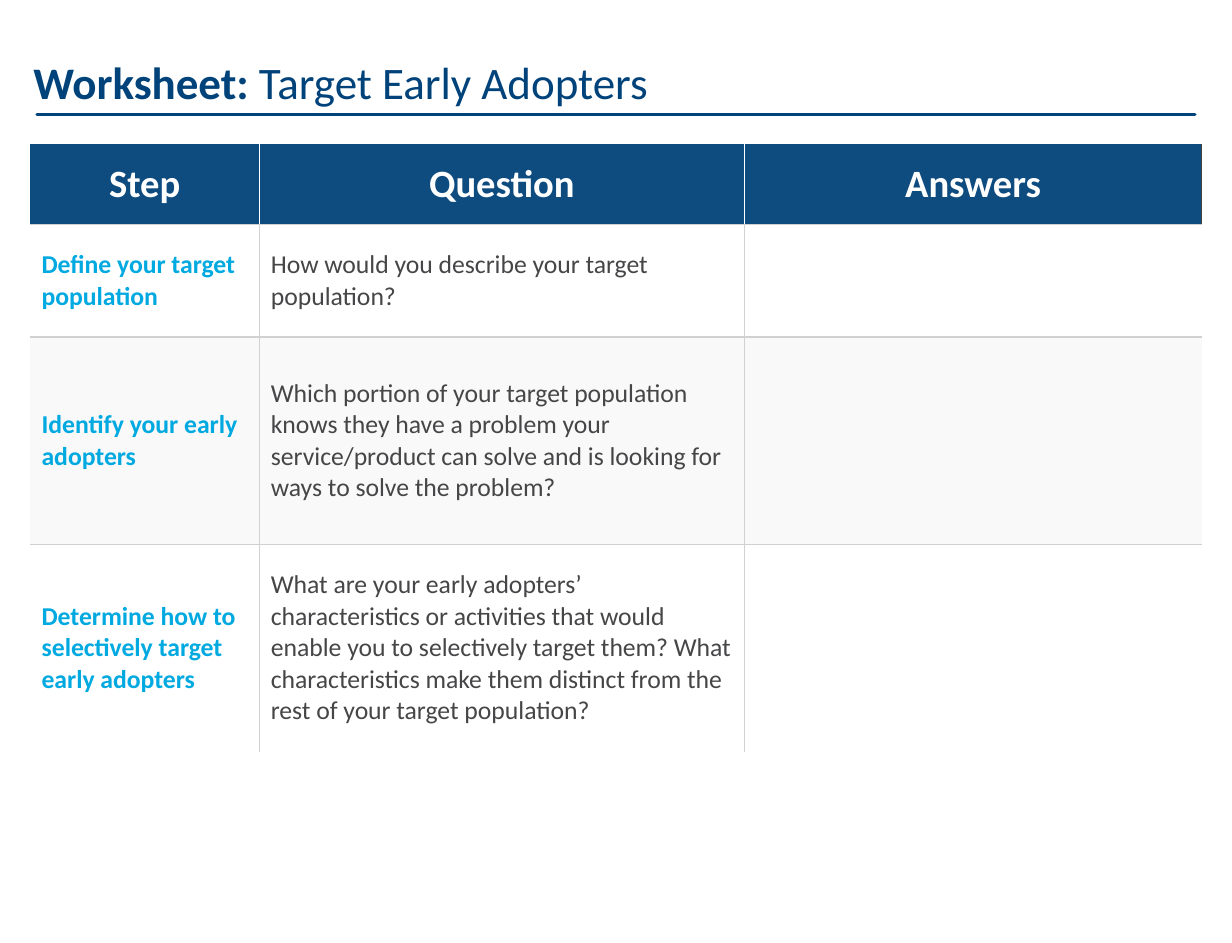
from dataclasses import dataclass

from lxml import etree
from pptx import Presentation
from pptx import util as u
from pptx.dml.color import RGBColor
from pptx.enum import shapes, text
from pptx.oxml import ns

NAVY = RGBColor(0x00, 0x43, 0x7A)
HEADER_BLUE = RGBColor(0x0E, 0x4B, 0x7F)
CYAN = RGBColor(0x00, 0xA9, 0xE0)
CHARCOAL = RGBColor(0x46, 0x45, 0x47)
EDGE_GRAY = RGBColor(0x42, 0x42, 0x43)
RULE_GRAY = RGBColor(0xD0, 0xD1, 0xD3)
BAND_GRAY = RGBColor(0xF9, 0xF9, 0xF9)
WHITE = RGBColor(0xFF, 0xFF, 0xFF)

SLIDE_WIDTH, SLIDE_HEIGHT = u.Inches(10.64), u.Inches(8.14)


@dataclass
class Column:
    heading: str
    width: float  # percent of slide width
    color: RGBColor
    bold: bool


@dataclass
class Step:
    texts: tuple[str, str, str]
    height: float  # percent of slide height


HEADER_HEIGHT = 8.6
COLUMNS = [
    Column("Step", 18.61, CYAN, True),
    Column("Question", 39.38, CHARCOAL, False),
    Column("Answers", 37.12, CHARCOAL, False),
]
STEPS = [
    Step(("Define your target population",
          "How would you describe your target population?", ""), 11.92),
    Step(("Identify your early adopters",
          "Which portion of your target population knows they have a problem your "
          "service/product can solve and is looking for ways to solve the problem?",
          ""), 21.99),
    Step(("Determine how to selectively target early adopters",
          "What are your early adopters’ characteristics or activities that would "
          "enable you to selectively target them? What characteristics make them "
          "distinct from the rest of your target population?", ""), 21.99),
]


def across(percent: float) -> int:
    return round(SLIDE_WIDTH * percent / 100)


def down(percent: float) -> int:
    return round(SLIDE_HEIGHT * percent / 100)


def write(paragraph, words: str, *, size: float, color: RGBColor, bold: bool = False,
          align=text.PP_ALIGN.LEFT) -> None:
    paragraph.alignment = align
    run = paragraph.add_run()
    run.text = words
    run.font.name = "Calibri"
    run.font.size = u.Pt(size)
    run.font.bold = bold
    run.font.color.rgb = color


def set_borders(cell, edges: dict[str, RGBColor | None]) -> None:
    """Give each edge a one-point line, or none; edges come in L, R, T, B order."""
    properties = cell._tc.get_or_add_tcPr()
    for place, (side, color) in enumerate(edges.items()):
        line = etree.Element(ns.qn(f"a:ln{side}"), w=str(u.Pt(1)))
        if color is None:
            etree.SubElement(line, ns.qn("a:noFill"))
        else:
            solid = etree.SubElement(line, ns.qn("a:solidFill"))
            etree.SubElement(solid, ns.qn("a:srgbClr"), val=str(color))
        properties.insert(place, line)


def add_title(slide) -> None:
    # Heading, resting on the rule
    title = slide.shapes.add_textbox(across(1.79), 0, across(95.39), down(12.16))
    frame = title.text_frame
    frame.word_wrap = True
    frame.vertical_anchor = text.MSO_ANCHOR.BOTTOM
    heading = frame.paragraphs[0]
    heading.line_spacing = 0.9
    write(heading, "Worksheet: ", size=28, color=NAVY, bold=True)
    write(heading, "Target Early Adopters", size=28, color=NAVY)

    # Rule
    rule = slide.shapes.add_connector(shapes.MSO_CONNECTOR.STRAIGHT, across(3.01),
                                      down(12.16), across(96.99), down(12.16))
    rule.line.color.rgb = NAVY
    rule.line.width = u.Pt(2.25)
    rule.line._get_or_add_ln().set("cap", "rnd")
    etree.SubElement(rule._element.spPr, ns.qn("a:effectLst"))


def add_worksheet(slide) -> None:
    heights = [HEADER_HEIGHT] + [step.height for step in STEPS]
    last_row, last_column = len(STEPS), len(COLUMNS) - 1
    worksheet = slide.shapes.add_table(
        len(heights), len(COLUMNS), across(2.44), down(15.23),
        across(sum(column.width for column in COLUMNS)), down(sum(heights))).table
    worksheet.first_row = worksheet.horz_banding = False
    for row, height in zip(worksheet.rows, heights):
        row.height = down(height)

    for c, column in enumerate(COLUMNS):
        worksheet.columns[c].width = across(column.width)
        words = [column.heading] + [step.texts[c] for step in STEPS]
        for r, entry in enumerate(words):
            cell = worksheet.cell(r, c)
            is_header = r == 0
            cell.vertical_anchor = text.MSO_ANCHOR.MIDDLE

            # Header and banded fills
            if is_header or r == 2:
                cell.fill.solid()
                cell.fill.fore_color.rgb = HEADER_BLUE if is_header else BAND_GRAY
            else:
                cell.fill.background()

            # Inner grid lines, with a dark edge at the end of the header
            divider = WHITE if is_header else RULE_GRAY
            outer_right = EDGE_GRAY if is_header else None
            set_borders(cell, {
                "L": divider if c > 0 else None,
                "R": divider if c < last_column else outer_right,
                "T": None if is_header else RULE_GRAY,
                "B": RULE_GRAY if r < last_row else None,
            })

            # Wording
            paragraph = cell.text_frame.paragraphs[0]
            if is_header:
                write(paragraph, entry, size=24, color=WHITE, bold=True,
                      align=text.PP_ALIGN.CENTER)
            elif entry:
                write(paragraph, entry, size=16, color=column.color, bold=column.bold)


def main() -> None:
    deck = Presentation()
    deck.slide_width, deck.slide_height = SLIDE_WIDTH, SLIDE_HEIGHT
    slide = deck.slides.add_slide(deck.slide_layouts[6])
    add_title(slide)
    add_worksheet(slide)
    deck.save("out.pptx")


if __name__ == "__main__":
    main()
